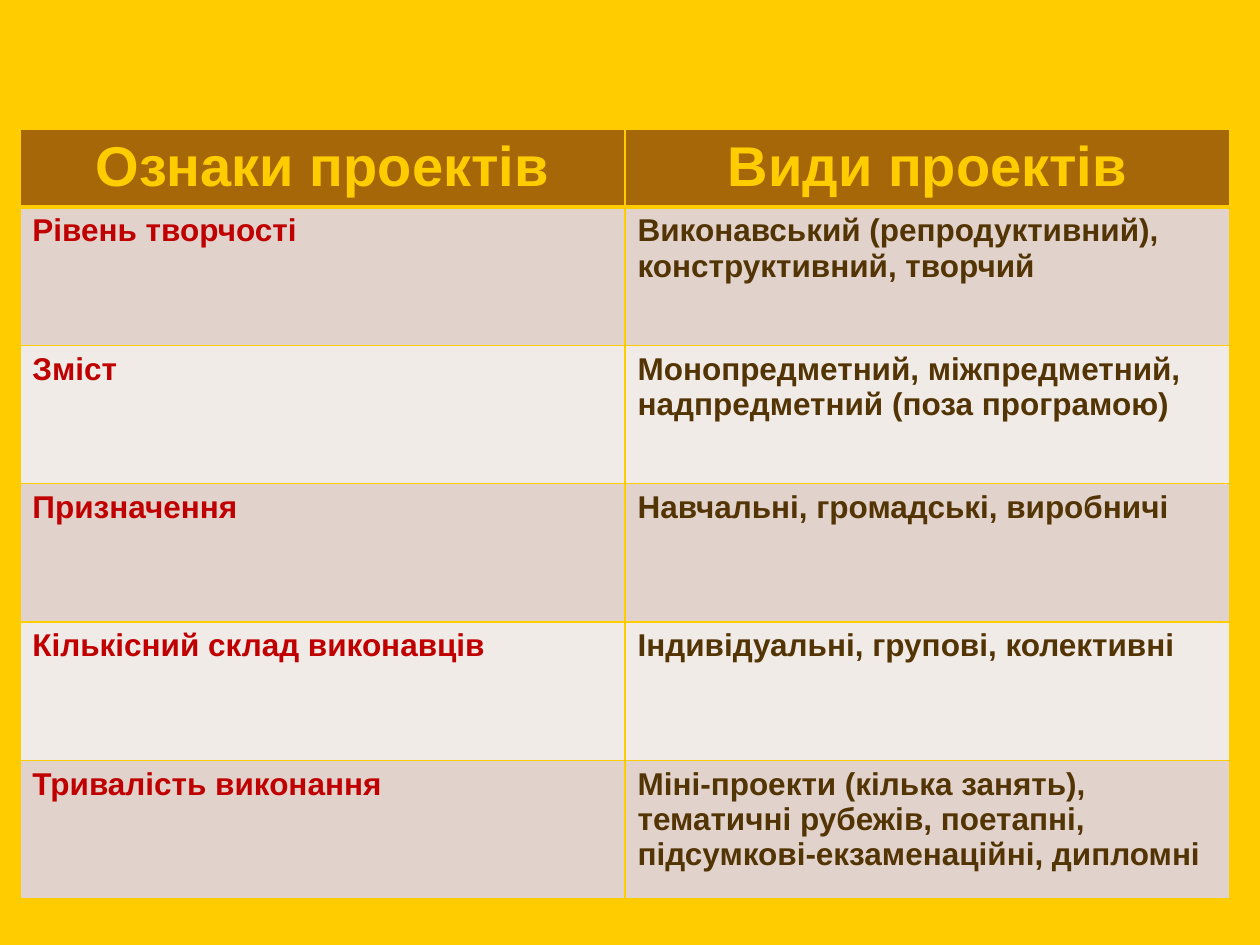
from dataclasses import dataclass

import lxml.etree
import pptx
import pptx.dml.color
import pptx.enum.text
import pptx.oxml.ns
import pptx.util

Cm = pptx.util.Cm
Pt = pptx.util.Pt


@dataclass(frozen=True)
class Theme:
    background: str = "FFCC00"
    header_fill: str = "A66708"
    band_fills: tuple = ("E1D3CC", "F1EBE7")
    feature_text: str = "C00000"
    kinds_text: str = "533404"
    font: str = "Arial"
    header_size: int = 32
    body_size: int = 18
    thin_line: int = 1
    thick_line: int = 3


THEME = Theme()

HEADERS = ("Ознаки проектів", "Види проектів")
PROJECT_KINDS = (
    ("Рівень творчості", "Виконавський (репродуктивний), конструктивний, творчий"),
    ("Зміст", "Монопредметний, міжпредметний, надпредметний (поза програмою)"),
    ("Призначення", "Навчальні, громадські, виробничі"),
    ("Кількісний склад виконавців", "Індивідуальні, групові, колективні"),
    ("Тривалість виконання",
     "Міні-проекти (кілька занять), тематичні рубежів, поетапні, "
     "підсумкові-екзаменаційні, дипломні"),
)


def rgb(color):
    return pptx.dml.color.RGBColor.from_string(color)


def set_borders(cell, top, bottom):
    """Draw all four borders; top and bottom are widths in points."""
    properties = cell._tc.get_or_add_tcPr()
    widths = {"L": THEME.thin_line, "R": THEME.thin_line, "T": top, "B": bottom}
    for position, (side, width) in enumerate(widths.items()):
        line = lxml.etree.Element(pptx.oxml.ns.qn(f"a:ln{side}"), w=str(Pt(width)))
        fill = lxml.etree.SubElement(line, pptx.oxml.ns.qn("a:solidFill"))
        lxml.etree.SubElement(fill, pptx.oxml.ns.qn("a:srgbClr"), val=THEME.background)
        properties.insert(position, line)


def fill_cell(cell, text, size, color, fill, alignment):
    cell.fill.solid()
    cell.fill.fore_color.rgb = rgb(fill)
    paragraph = cell.text_frame.paragraphs[0]
    paragraph.alignment = alignment
    run = paragraph.add_run()
    run.text = text
    run.font.name = THEME.font
    run.font.size = Pt(size)
    run.font.bold = True
    run.font.color.rgb = rgb(color)


def add_project_table(slide, left, top, width, height, header_height):
    rows = (HEADERS, *PROJECT_KINDS)
    table = slide.shapes.add_table(
        len(rows), len(HEADERS), left, top, width, height).table
    for column in table.columns:
        column.width = width // len(HEADERS)
    body_height = (height - header_height) // len(PROJECT_KINDS)

    for row_index, texts in enumerate(rows):
        is_header = row_index == 0
        table.rows[row_index].height = header_height if is_header else body_height
        for column_index, text in enumerate(texts):
            cell = table.cell(row_index, column_index)
            if is_header:
                fill_cell(cell, text, THEME.header_size, THEME.background,
                          THEME.header_fill, pptx.enum.text.PP_ALIGN.CENTER)
            else:
                color = (THEME.feature_text, THEME.kinds_text)[column_index]
                fill_cell(cell, text, THEME.body_size, color,
                          THEME.band_fills[(row_index - 1) % 2],
                          pptx.enum.text.PP_ALIGN.LEFT)
            set_borders(
                cell,
                top=THEME.thick_line if row_index == 1 else THEME.thin_line,
                bottom=THEME.thick_line if is_header else THEME.thin_line)


def main():
    presentation = pptx.Presentation()
    presentation.slide_width = Cm(25.4)
    presentation.slide_height = Cm(19.05)
    slide = presentation.slides.add_slide(presentation.slide_layouts[6])
    slide.background.fill.solid()
    slide.background.fill.fore_color.rgb = rgb(THEME.background)
    add_project_table(slide, Cm(0.4), Cm(2.6), Cm(24.4), Cm(15.52), Cm(1.57))
    presentation.save("out.pptx")


if __name__ == "__main__":
    main()
